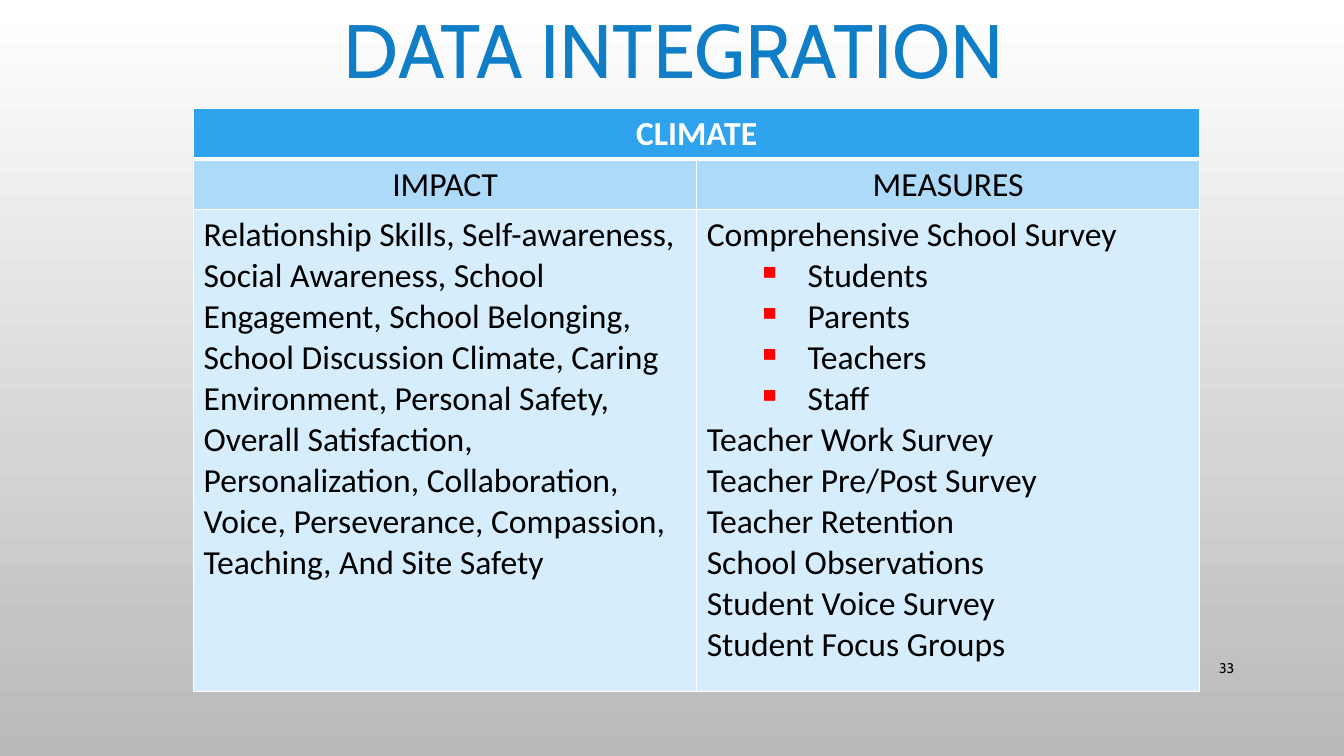
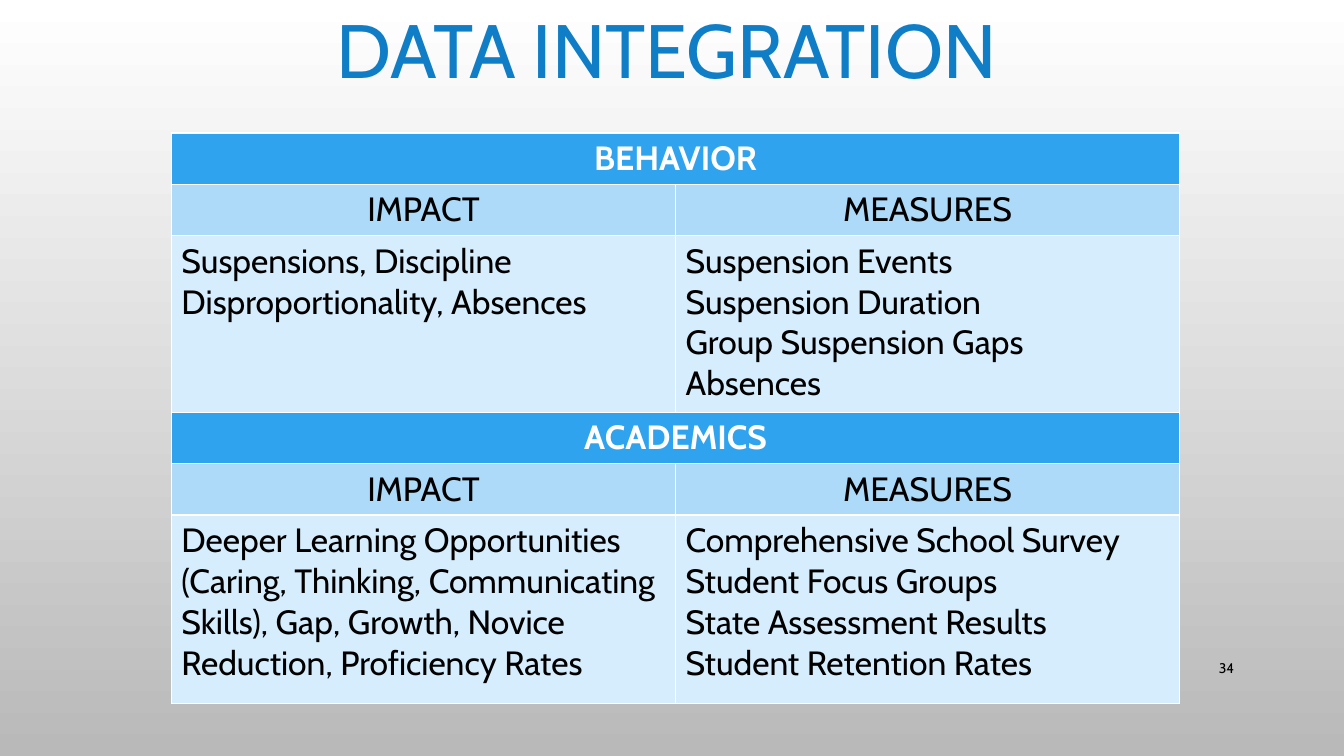
from pptx import Presentation
from pptx.dml.color import RGBColor as RGB
from pptx.enum.text import MSO_ANCHOR as ANCHOR, PP_ALIGN as ALIGN
from pptx.oxml import parse_xml
from pptx.oxml.ns import nsdecls
from pptx.util import Inches, Pt

COLORS = {
    "title": "107EC6", "header": "2FA3EE", "subheader": "ACDAF8", "body": "D5EDFC",
    "bullet": "FF0000", "white": "FFFFFF", "black": "000000", "grey": "B9B9B9",
}
TITLE_FONT = "Cabin"
SUBHEADS = ["IMPACT", "MEASURES"]

# Each section is a banner, a row of subheads and a row of two lists;
# lines that start with a tab are bulleted
SLIDES = [
    {
        "title": "DATA INTEGRATION", "title_left": 2.89, "number": "33",
        "font": "Calibri", "at": (1.92, 1.08), "col_width": 4.99,
        "rows": [0.49, 0.49, 4.78], "banner_line": 3,
        "sections": [
            ("CLIMATE",
             ["Relationship Skills, Self-awareness, Social Awareness, School Engagement, "
              "School Belonging, School Discussion Climate, Caring Environment, Personal "
              "Safety, Overall Satisfaction, Personalization, Collaboration, Voice, "
              "Perseverance, Compassion, Teaching, And Site Safety"],
             ["Comprehensive School Survey", "\tStudents", "\tParents", "\tTeachers",
              "\tStaff", "Teacher Work Survey", "Teacher Pre/Post Survey",
              "Teacher Retention", "School Observations", "Student Voice Survey",
              "Student Focus Groups"]),
        ],
    },
    {
        "title": "DATA INTEGRATION ", "title_left": 2.9, "number": "34",
        "font": "Cabin", "at": (1.7, 1.32), "col_width": 5,
        "rows": [0.51, 0.51, 1.75, 0.51, 0.51, 1.87], "banner_line": 1,
        "sections": [
            ("BEHAVIOR",
             ["Suspensions, Discipline Disproportionality, Absences"],
             ["Suspension Events", "Suspension Duration", "Group Suspension Gaps",
              "Absences"]),
            ("ACADEMICS",
             ["Deeper Learning Opportunities (Caring, Thinking, Communicating Skills), "
              "Gap, Growth, Novice Reduction, Proficiency Rates"],
             ["Comprehensive School Survey", "Student Focus Groups",
              "State Assessment Results", "Student Retention Rates"]),
        ],
    },
]


def add_label(s, text, box, size, color, align):
    sp = s.shapes.add_textbox(*[Inches(v) for v in box])
    tf = sp.text_frame
    tf.word_wrap = True
    tf.vertical_anchor = ANCHOR.MIDDLE
    p = tf.paragraphs[0]
    p.text = text
    p.alignment = align
    f = p.runs[0].font
    f.name, f.size, f.color.rgb = TITLE_FONT, Pt(size), RGB.from_string(COLORS[color])
    return p


def fill_cell(cell, lines, font, fill, color="black", bold=False, align=None, top=1, bottom=1):
    # Borders come before the fill in the cell properties
    tcPr = cell._tc.get_or_add_tcPr()
    for side, width in (("L", 1), ("R", 1), ("T", top), ("B", bottom)):
        tcPr.append(parse_xml(
            f'<a:ln{side} {nsdecls("a")} w="{Pt(width)}"><a:solidFill>'
            f'<a:srgbClr val="{COLORS["white"]}"/></a:solidFill></a:ln{side}>'))
    cell.fill.solid()
    cell.fill.fore_color.rgb = RGB.from_string(COLORS[fill])

    tf = cell.text_frame
    for i, line in enumerate(lines):
        p = tf.paragraphs[0] if i == 0 else tf.add_paragraph()
        p.text = line.lstrip("\t")
        p.alignment = align
        if line.startswith("\t"):
            p.level = 1
            pPr = p._p.get_or_add_pPr()
            pPr.set("marL", str(Inches(1)))
            pPr.set("indent", str(Inches(-0.5)))
            pPr.append(parse_xml(f'<a:buClr {nsdecls("a")}><a:srgbClr val="{COLORS["bullet"]}"/></a:buClr>'))
            pPr.append(parse_xml(f'<a:buChar {nsdecls("a")} char="▪"/>'))
        f = p.runs[0].font
        f.name, f.size, f.bold = font, Pt(24), bold
        f.color.rgb = RGB.from_string(COLORS[color])


prs = Presentation()
prs.slide_width, prs.slide_height = Inches(13.33), Inches(7.5)

for page in SLIDES:
    s = prs.slides.add_slide(prs.slide_layouts[6])

    # Background, white at the top to grey
    bg = s.background.fill
    bg.gradient()
    bg.gradient_angle = 270
    for stop, name in zip(bg.gradient_stops, ("white", "grey")):
        stop.color.rgb = RGB.from_string(COLORS[name])

    # Title
    p = add_label(s, page["title"], (page["title_left"], 0, 7.59, 1.08), 54, "title", ALIGN.CENTER)
    p.line_spacing = 0.9

    # Table
    rows, font, line = page["rows"], page["font"], page["banner_line"]
    left, top = page["at"]
    table = s.shapes.add_table(len(rows), 2, Inches(left), Inches(top),
                               Inches(2 * page["col_width"]), Inches(sum(rows))).table
    table.first_row = table.horz_banding = False
    for column in table.columns:
        column.width = Inches(page["col_width"])
    for row, height in zip(table.rows, rows):
        row.height = Inches(height)

    for n, (banner, *lists) in enumerate(page["sections"]):
        first = 3 * n
        table.cell(first, 0).merge(table.cell(first, 1))
        for c in range(2):
            fill_cell(table.cell(first, c), [banner] if c == 0 else [], font, "header",
                      "white", True, ALIGN.CENTER, bottom=line)
            fill_cell(table.cell(first + 1, c), [SUBHEADS[c]], font, "subheader",
                      align=ALIGN.CENTER, top=line)
            fill_cell(table.cell(first + 2, c), lists[c], font, "body")

    # Slide number
    add_label(s, page["number"], (11.5, 6.43, 0.84, 0.4), 10, "black", ALIGN.RIGHT)

prs.save("out.pptx")
